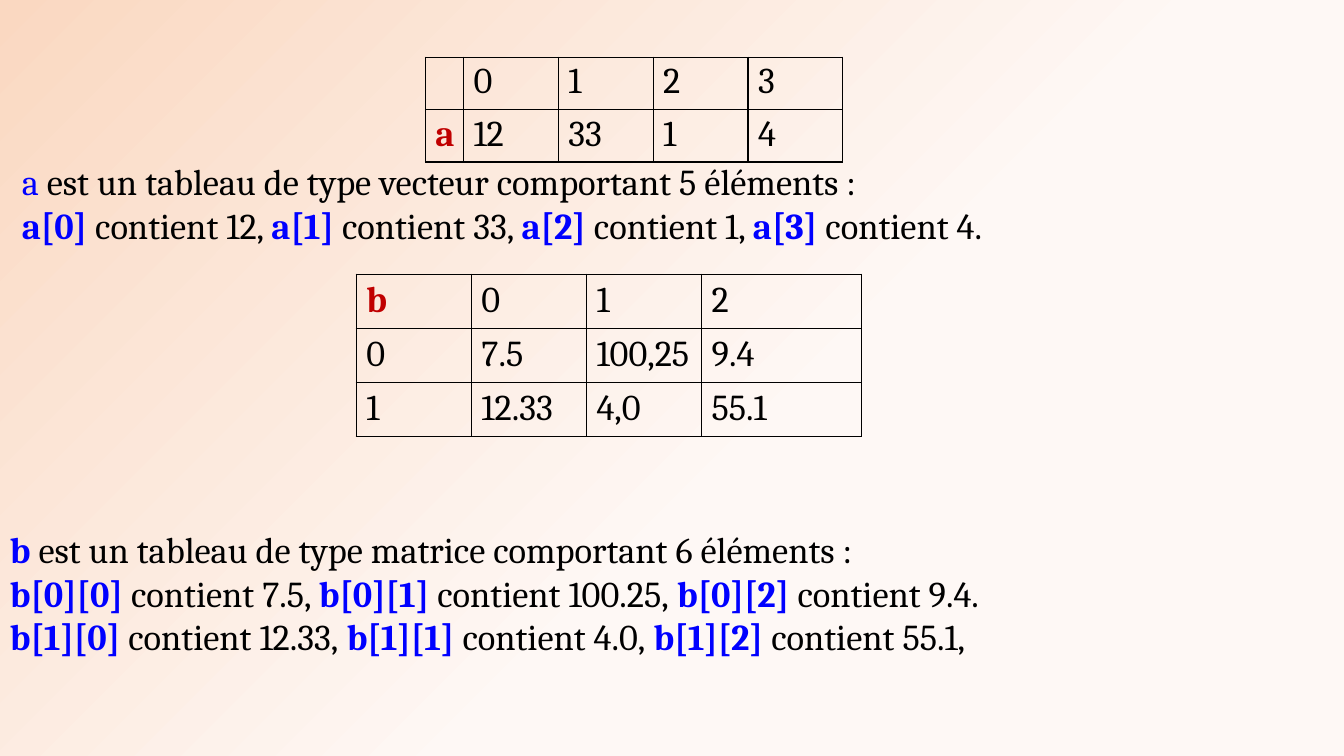
"""Build a slide explaining one- and two-dimensional arrays with tables."""
from lxml import etree
from pptx import Presentation
from pptx.dml.color import RGBColor as RGB
from pptx.oxml import parse_xml
from pptx.oxml.ns import nsdecls, qn
from pptx.util import Cm, Pt

COLORS = {"black": "000000", "blue": "0000FF", "red": "C00000",
          "light": "FEF8F5", "peach": "FAD8C1"}


def add_run(p, text, color="black", bold=False, size=26, font="Cambria"):
    r = p.add_run()
    r.text = text
    r.font.size = Pt(size)
    r.font.name = font
    r.font.bold = bold
    r.font.color.rgb = RGB.from_string(COLORS[color])


prs = Presentation()
prs.slide_width, prs.slide_height = Cm(33.87), Cm(19.05)
s = prs.slides.add_slide(prs.slide_layouts[6])

fill = s.background.fill
fill.gradient()
for stop, color, position in zip(fill.gradient_stops, ("light", "peach"), (0.42, 1)):
    stop.color.rgb = RGB.from_string(COLORS[color])
    stop.position = position
lin = next(s.element.iter(qn("a:lin")))
lin.getparent().replace(lin, parse_xml(
    f'<a:path {nsdecls("a")} path="circle"><a:fillToRect l="100000" t="100000"/></a:path>'))

tables = [
    (10.72, 1.44, [0.96, 2.39, 2.39, 2.39, 2.39], 1.32, 0.1,
     [["", "0", "1", "2", "3"],
      ["a", "12", "33", "1", "4"]]),
    (8.98, 6.91, [2.9, 2.9, 2.9, 4.04], 1.36, 0.13,
     [["b", "0", "1", "2"],
      ["0", "7.5", "100,25", "9.4"],
      ["1", "12.33", "4,0", "55.1"]]),
]
for left, top, widths, row_height, margin, rows in tables:
    table = s.shapes.add_table(len(rows), len(widths), Cm(left), Cm(top),
                               Cm(sum(widths)), Cm(row_height * len(rows))).table
    for column, width in zip(table.columns, widths):
        column.width = Cm(width)
    for i, row in enumerate(rows):
        table.rows[i].height = Cm(row_height)
        for j, text in enumerate(row):
            cell = table.cell(i, j)
            cell.margin_top = cell.margin_bottom = Cm(margin)
            cell.fill.background()
            tcPr = cell._tc.get_or_add_tcPr()
            for k, side in enumerate(("lnL", "lnR", "lnT", "lnB")):
                ln = etree.Element(qn(f"a:{side}"), w=str(Pt(1)))
                solid = etree.SubElement(ln, qn("a:solidFill"))
                etree.SubElement(solid, qn("a:srgbClr"), val=COLORS["black"])
                tcPr.insert(k, ln)
            if text:
                is_name = text in ("a", "b")
                add_run(cell.text_frame.paragraphs[0], text,
                        color="red" if is_name else "black", bold=is_name)

explanations = [
    (0.3, 3.89, 33.57, 2.49, [
        ["a", " est un tableau de type vecteur comportant 5 éléments :"],
        ["a[0] ", "contient 12, ", "a[1]", " contient 33, ",
         "a[2]", " contient 1, ", "a[3]", " contient 4."]]),
    (0, 13.16, 33.87, 4.7, [
        ["b", " est un tableau de type matrice comportant 6 éléments :"],
        ["b[0][0] ", "contient 7.5, ", "b[0][1] ", "contient 100.25,",
         " b[0][2] ", "contient 9.4."],
        ["b[1][0] ", "contient 12.33,", " b[1][1] ", "contient 4.0,",
         " b[1][2] ", "contient 55.1,"]]),
]
for left, top, width, height, lines in explanations:
    tf = s.shapes.add_textbox(Cm(left), Cm(top), Cm(width), Cm(height)).text_frame
    tf.word_wrap = True
    for i, line in enumerate(lines):
        p = tf.add_paragraph() if i else tf.paragraphs[0]
        for k, text in enumerate(line):
            is_name = k % 2 == 0
            add_run(p, text, color="blue" if is_name else "black",
                    bold=is_name and text != "a")

prs.save("out.pptx")
